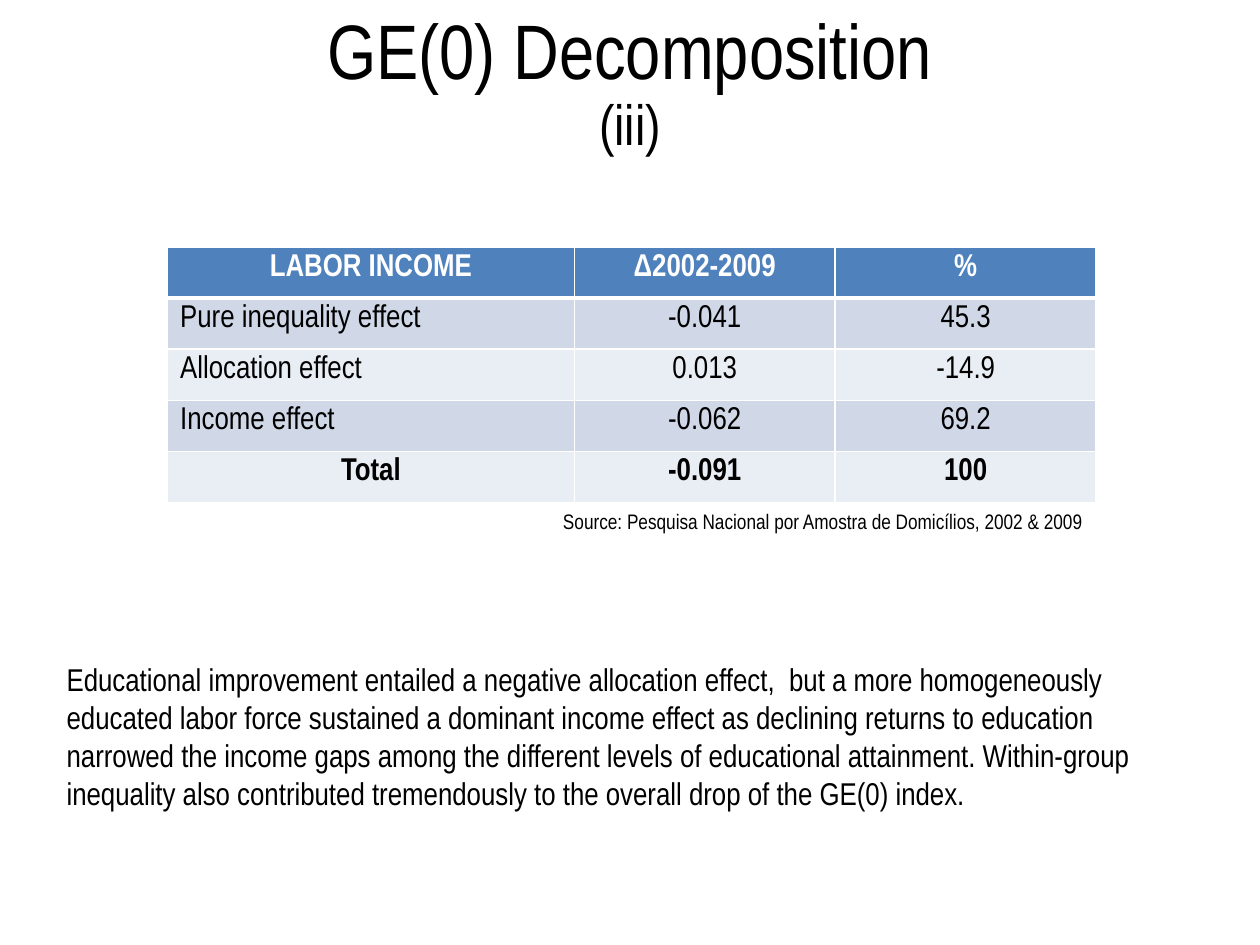
from dataclasses import dataclass
from typing import NamedTuple

from lxml.etree import SubElement
from pptx import Presentation
from pptx.dml.color import RGBColor
from pptx.enum.text import MSO_ANCHOR, MSO_AUTO_SIZE, PP_ALIGN
from pptx.oxml.ns import qn
from pptx.util import Inches, Pt


@dataclass(frozen=True)
class Theme:
    font: str = "Arial Narrow"
    text: str = "000000"
    light: str = "FFFFFF"
    header: str = "4F81BD"
    bands: tuple = ("D0D8E8", "E9EDF4")
    title: float = 44.1
    subtitle: float = 32.4
    body: float = 18
    note: float = 12
    rule: float = 1
    header_rule: float = 3


class Box(NamedTuple):
    """Position and size as shares of the slide."""
    left: float
    top: float
    width: float
    height: float


class Row(NamedTuple):
    label: str
    change: str
    share: str


THEME = Theme()
WIDTH, HEIGHT = Inches(10), Inches(7.5)
TITLE_BOX = Box(0.05, 0.0067, 0.9, 0.1667)
TABLE_BOX = Box(0.133, 0.2613, 0.737, 0.2707)
SOURCE_BOX = Box(0.437, 0.532, 0.444, 0.04)
COMMENT_BOX = Box(0.043, 0.692, 0.921, 0.1747)
COLUMN_SHARES = (0.438, 0.281, 0.281)

ROWS = [
    Row("LABOR INCOME", "Δ2002-2009", "%"),
    Row("Pure inequality effect", "-0.041", "45.3"),
    Row("Allocation effect", "0.013", "-14.9"),
    Row("Income effect", "-0.062", "69.2"),
    Row("Total", "-0.091", "100"),
]
SOURCE = "Source: Pesquisa Nacional por Amostra de Domicílios, 2002 & 2009"
COMMENT = (
    "Educational improvement entailed a negative allocation effect,  but a more "
    "homogeneously educated labor force sustained a dominant income effect as "
    "declining returns to education narrowed the income gaps among the different "
    "levels of educational attainment. Within-group inequality also contributed "
    "tremendously to the overall drop of the GE(0) index."
)


def place(box: Box) -> tuple:
    return (int(box.left * WIDTH), int(box.top * HEIGHT),
            int(box.width * WIDTH), int(box.height * HEIGHT))


def add_run(p, text: str, size: float, color: str = THEME.text, bold: bool = False) -> None:
    r = p.add_run()
    r.text = text
    for name, value in {"name": THEME.font, "size": Pt(size), "bold": bold}.items():
        setattr(r.font, name, value)
    r.font.color.rgb = RGBColor.from_string(color)


def add_title(s) -> None:
    sp = s.shapes.title
    sp.left, sp.top, sp.width, sp.height = place(TITLE_BOX)
    tf = sp.text_frame
    tf.auto_size = MSO_AUTO_SIZE.NONE
    tf.vertical_anchor = MSO_ANCHOR.MIDDLE
    p = tf.paragraphs[0]
    p.alignment, p.line_spacing = PP_ALIGN.CENTER, 0.9
    add_run(p, "GE(0) Decomposition", THEME.title)
    p.add_line_break()
    add_run(p, "(iii)", THEME.subtitle)


def add_text(s, box: Box, text: str, size: float, wrap: bool) -> None:
    tf = s.shapes.add_textbox(*place(box)).text_frame
    tf.word_wrap = wrap
    tf.auto_size = MSO_AUTO_SIZE.SHAPE_TO_FIT_TEXT
    add_run(tf.paragraphs[0], text, size)


def set_borders(cell, widths: dict) -> None:
    # Border lines must come before the fill in the cell properties
    tc_pr = cell._tc.get_or_add_tcPr()
    for i, (side, width) in enumerate(widths.items()):
        ln = SubElement(tc_pr, qn(f"a:ln{side}"), w=str(Pt(width)))
        SubElement(SubElement(ln, qn("a:solidFill")), qn("a:srgbClr"), val=THEME.light)
        tc_pr.insert(i, ln)


def add_effects_table(s) -> None:
    table = s.shapes.add_table(len(ROWS), len(COLUMN_SHARES), *place(TABLE_BOX)).table
    for column, share in zip(table.columns, COLUMN_SHARES):
        column.width = int(share * TABLE_BOX.width * WIDTH)
    last = len(ROWS) - 1
    for i, row in enumerate(ROWS):
        header = i == 0
        strong = i in (0, last)
        fill = THEME.header if header else THEME.bands[(i - 1) % 2]
        for j, text in enumerate(row):
            cell = table.cell(i, j)
            cell.fill.solid()
            cell.fill.fore_color.rgb = RGBColor.from_string(fill)
            cell.vertical_anchor = MSO_ANCHOR.TOP
            set_borders(cell, {
                "L": THEME.rule, "R": THEME.rule,
                "T": THEME.header_rule if i == 1 else THEME.rule,
                "B": THEME.header_rule if header else THEME.rule,
            })
            p = cell.text_frame.paragraphs[0]
            p.alignment = PP_ALIGN.CENTER if strong or j else PP_ALIGN.LEFT
            add_run(p, text, THEME.body, THEME.light if header else THEME.text, strong)


def main() -> None:
    prs = Presentation()
    prs.slide_width, prs.slide_height = WIDTH, HEIGHT
    s = prs.slides.add_slide(prs.slide_layouts[5])  # title only

    add_title(s)
    add_effects_table(s)
    # Source line and commentary under the table
    add_text(s, SOURCE_BOX, SOURCE, THEME.note, wrap=False)
    add_text(s, COMMENT_BOX, COMMENT, THEME.body, wrap=True)
    prs.save("out.pptx")


if __name__ == "__main__":
    main()
